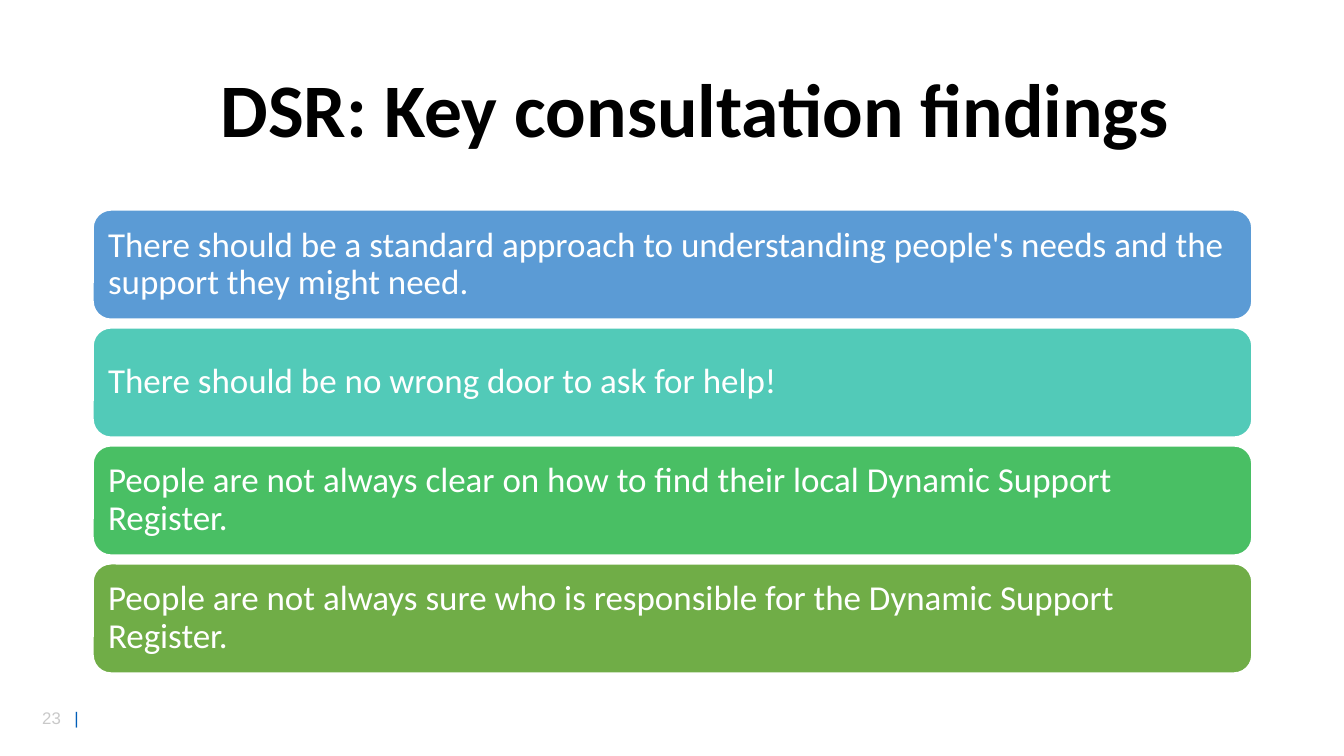
from lxml.etree import SubElement
from pptx import Presentation
from pptx.dml.color import RGBColor
from pptx.enum.shapes import MSO_SHAPE
from pptx.enum.text import MSO_ANCHOR, PP_ALIGN
from pptx.oxml.ns import qn
from pptx.util import Pt

SCALE = 9144


def px(count):
    """Turn px, at 100 to the inch, into EMU."""
    return count * SCALE


def color(code):
    """Turn a hex string into a colour."""
    return RGBColor.from_string(code)


class Deck:
    """Hold the style and the current slide."""

    def __init__(self, wide, high, font):
        """Start a deck with one blank slide."""
        self.show = Presentation()
        self.show.slide_width, self.show.slide_height = px(wide), px(high)
        self.slide = self.show.slides.add_slide(self.show.slide_layouts[6])
        self.font = font

    def label(self, shape, runs, size, font=None, bold=False, space=1.0, tab=0):
        """Fill a shape with one left-aligned paragraph of (text, colour) runs."""
        frame = shape.text_frame
        frame.word_wrap = True
        frame.vertical_anchor = MSO_ANCHOR.MIDDLE
        para = frame.paragraphs[0]
        para.alignment = PP_ALIGN.LEFT
        para.line_spacing = space
        if tab:
            stops = SubElement(para._p.get_or_add_pPr(), qn("a:tabLst"))
            SubElement(stops, qn("a:tab"), pos=str(px(tab)), algn="l")
        for text, tint in runs:
            run = para.add_run()
            run.text = text
            run.font.name = font or self.font
            run.font.size = Pt(size)
            run.font.bold = bold
            run.font.color.rgb = color(tint)

    def text(self, left, top, wide, high, runs, size, **style):
        """Add a text box."""
        box = self.slide.shapes.add_textbox(px(left), px(top), px(wide), px(high))
        self.label(box, runs, size, **style)

    def card(self, left, top, wide, high, fill, runs, size, **style):
        """Add a rounded card with text."""
        card = self.slide.shapes.add_shape(
            MSO_SHAPE.ROUNDED_RECTANGLE, px(left), px(top), px(wide), px(high))
        card.shadow.inherit = False
        card.fill.solid()
        card.fill.fore_color.rgb = color(fill)
        card.line.color.rgb = color("FFFFFF")
        card.line.width = Pt(1.5)
        frame = card.text_frame
        frame.margin_left = frame.margin_right = px(10)
        frame.margin_top = frame.margin_bottom = px(10)
        self.label(card, runs, size, **style)


FINDINGS = [
    ("5B9BD5", "There should be a standard approach to understanding people's "
               "needs and the support they might need."),
    ("52CAB8", "There should be no wrong door to ask for help!"),
    ("49BF64", "People are not always clear on how to find their local "
               "Dynamic Support Register."),
    ("70AD47", "People are not always sure who is responsible for the "
               "Dynamic Support Register."),
]


def main():
    """Build and save the slide."""
    deck = Deck(1333, 750, "Calibri")
    deck.text(32, 697, 71, 30, [("23", "C9C9C9"), ("\t|", "005EB8")], 12,
              font="Arial", tab=32)
    deck.text(209, 40, 1032, 145, [("DSR: Key consultation findings", "000000")],
              54, bold=True, space=0.9)
    for row, (fill, text) in enumerate(FINDINGS):
        deck.card(92, 208 + 117 * row, 1150, 109, fill, [(text, "FFFFFF")], 25,
                  space=0.9)
    deck.show.save("out.pptx")


if __name__ == "__main__":
    main()
